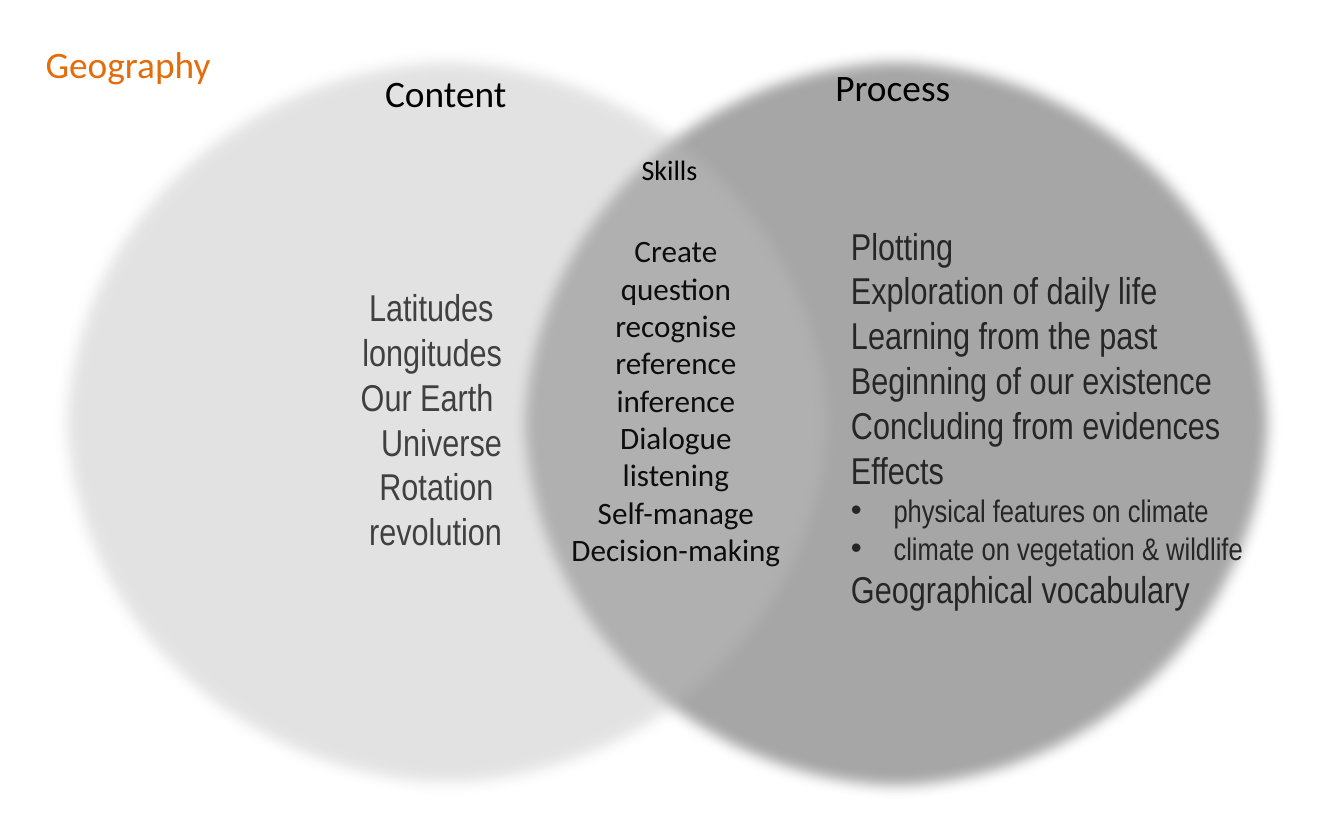
from lxml.etree import SubElement
from pptx import Presentation
from pptx.dml.color import RGBColor
from pptx.enum.shapes import MSO_SHAPE
from pptx.enum.text import MSO_ANCHOR, MSO_AUTO_SIZE, PP_ALIGN
from pptx.oxml.ns import qn
from pptx.util import Emu, Inches, Pt

COLORS = {
    "process": "A6A6A6",
    "content": "BFBFBF",
    "black": "000000",
    "content_text": "404040",
    "process_text": "262626",
    "skills_text": "0D0D0D",
    "title": "E46C0A",
}
COLUMNS, ROWS = 24, 15
HEADING_FONT, LIST_FONT = "Calibri", "Arial Narrow"
SOFT_EDGE = Pt(9)

CONTENT = ["Latitudes ", "longitudes", "Our Earth ", "Universe", "Rotation ", "revolution"]
SKILLS = ["Create", "question", "recognise", "reference", "inference",
          "Dialogue", "listening", "Self-manage", "Decision-making"]
PROCESS = ["Plotting", "Exploration of daily life", "Learning from the past",
           "Beginning of our existence", "Concluding from evidences", "Effects",
           "physical features on climate", "climate on vegetation & wildlife",
           "Geographical vocabulary"]
PROCESS_BULLETS = (6, 7)


class VennSlide:
    """Draws on one slide; boxes are (column, row, columns wide, rows high)."""

    def __init__(self, presentation):
        self.column = presentation.slide_width / COLUMNS
        self.row = presentation.slide_height / ROWS
        self.slide = presentation.slides.add_slide(presentation.slide_layouts[5])

    def place(self, box):
        left, top, width, height = box
        return [Emu(round(length)) for length in (
            left * self.column, top * self.row, width * self.column, height * self.row)]

    def circle(self, box, color, opacity=100):
        shape = self.slide.shapes.add_shape(MSO_SHAPE.OVAL, *self.place(box))
        shape.line.fill.background()
        shape.fill.solid()
        shape.fill.fore_color.rgb = RGBColor.from_string(COLORS[color])
        properties = shape._element.spPr
        if opacity < 100:
            fill_color = properties.find(qn("a:solidFill"))[0]
            SubElement(fill_color, qn("a:alpha"), val=str(opacity * 1000))
        shape.shadow.inherit = False
        effects = properties.find(qn("a:effectLst"))
        SubElement(effects, qn("a:softEdge"), rad=str(SOFT_EDGE))

    def set_text(self, shape, lines, color, size, font, align, wrap):
        frame = shape.text_frame
        frame.text = "\n".join(lines)
        frame.word_wrap = wrap
        frame.auto_size = MSO_AUTO_SIZE.SHAPE_TO_FIT_TEXT
        frame.vertical_anchor = MSO_ANCHOR.TOP
        for paragraph in frame.paragraphs:
            paragraph.alignment = align
            for run in paragraph.runs:
                run.font.name = font
                run.font.size = Pt(size)
                run.font.color.rgb = RGBColor.from_string(COLORS[color])

    def title(self, box, text):
        shape = self.slide.shapes.title
        shape.left, shape.top, shape.width, shape.height = self.place(box)
        self.set_text(shape, [text], "title", 24, HEADING_FONT, PP_ALIGN.RIGHT, False)

    def heading(self, box, text, size=24):
        shape = self.slide.shapes.add_textbox(*self.place(box))
        self.set_text(shape, [text], "black", size, HEADING_FONT, PP_ALIGN.LEFT, False)

    def word_list(self, box, lines, color, size=24, font=LIST_FONT, align=PP_ALIGN.LEFT):
        shape = self.slide.shapes.add_textbox(*self.place(box))
        self.set_text(shape, lines, color, size, font, align, True)
        return shape.text_frame.paragraphs

    def bullet(self, paragraph, size=20, indent=Inches(0.38)):
        properties = paragraph._p.get_or_add_pPr()
        properties.set("marL", str(indent))
        properties.set("indent", str(-indent))
        SubElement(properties, qn("a:buFont"), typeface="Arial")
        SubElement(properties, qn("a:buChar"), char="•")
        for run in paragraph.runs:
            run.font.size = Pt(size)


def main():
    presentation = Presentation()
    presentation.slide_width, presentation.slide_height = Inches(12), Inches(7.5)
    venn = VennSlide(presentation)

    venn.title((0.56, 0.64, 3.4, 1), "Geography")
    venn.circle((9.16, 0.88, 13.7, 13.38), "process")
    venn.circle((0.98, 0.88, 14.02, 13.32), "content", opacity=43)

    venn.heading((6.68, 1.16, 2.6, 1), "Content")
    venn.heading((14.72, 1.04, 2.58, 1), "Process")
    venn.heading((11.26, 2.62, 1.42, 0.8), "Skills", size=18)

    venn.word_list((3.02, 4.98, 6.14, 5.04), CONTENT, "content_text", align=PP_ALIGN.RIGHT)
    process = venn.word_list((15, 3.88, 8.66, 7.2), PROCESS, "process_text")
    for index in PROCESS_BULLETS:
        venn.bullet(process[index])
    venn.word_list((9.44, 4.04, 5.26, 7.06), SKILLS, "skills_text", 20,
                   HEADING_FONT, PP_ALIGN.CENTER)

    presentation.save("out.pptx")


if __name__ == "__main__":
    main()
